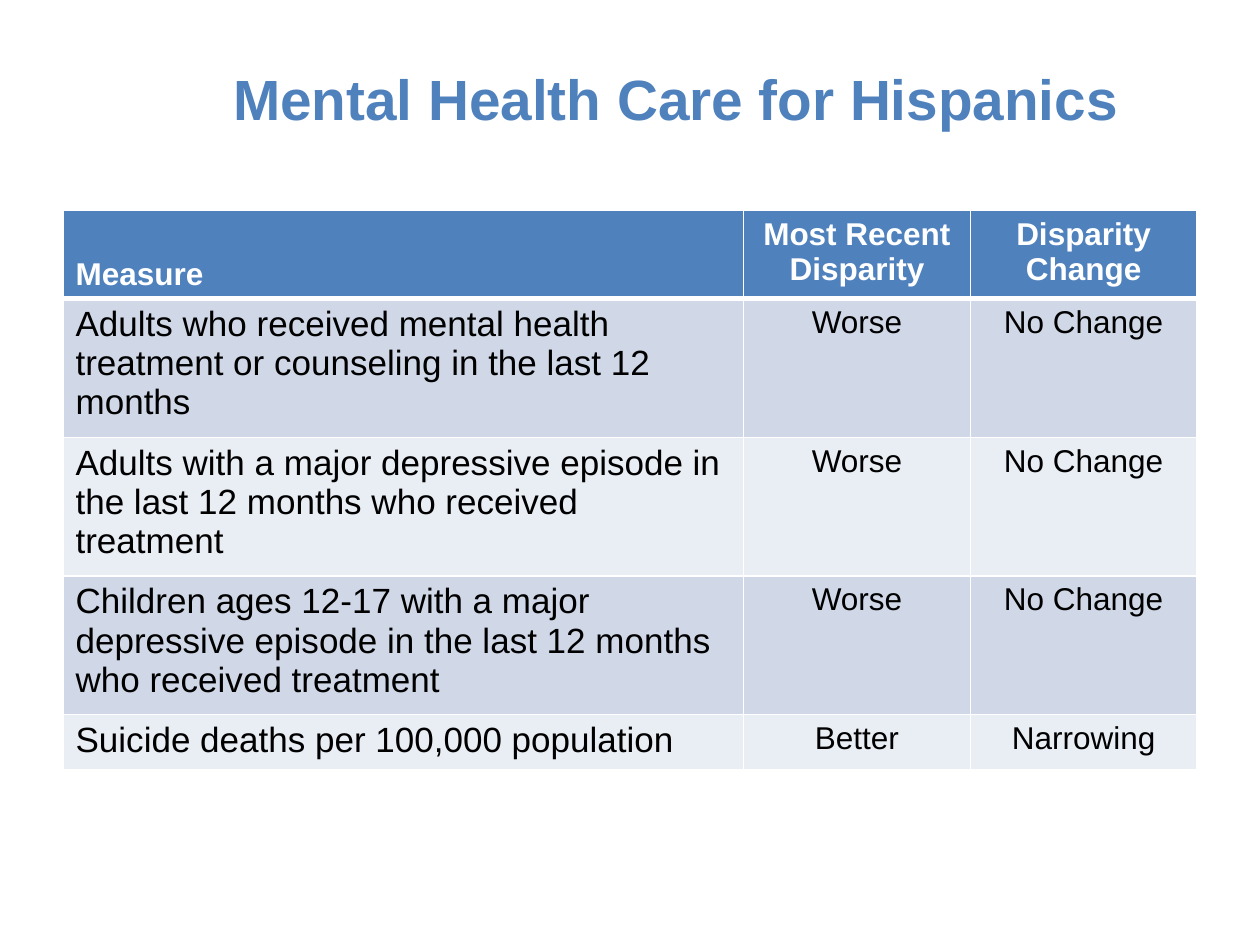
from lxml import etree
from pptx import Presentation, util as u
from pptx.dml.color import RGBColor
from pptx.enum import text
from pptx.oxml.ns import qn

TITLE = "Mental Health Care for Hispanics"
HEADER = ("Measure", "Most Recent Disparity", "Disparity Change")
MEASURES = [
    ("Adults who received mental health treatment or counseling in the last 12 months",
     "Worse", "No Change"),
    ("Adults with a major depressive episode in the last 12 months who received treatment",
     "Worse", "No Change"),
    ("Children ages 12-17 with a major depressive episode in the last 12 months "
     "who received treatment", "Worse", "No Change"),
    ("Suicide deaths per 100,000 population", "Better", "Narrowing"),
]
COLUMN_WIDTHS = (13.72, 4.57, 4.57)
ROW_HEIGHTS = (1.66, 2.62, 2.62, 2.62, 1.02)

THEME = {
    "font": "Arial",
    "accent": "4F81BD",
    "white": "FFFFFF",
    "black": "000000",
    "bands": ("D0D8E8", "E9EDF4"),
    "title_size": 32.4,
    "measure_size": 20,
    "size": 18,
    "border": 1,
    "header_border": 3,
}


def format_paragraph(paragraph, size, color, bold=False, centered=False):
    paragraph.alignment = text.PP_ALIGN.CENTER if centered else text.PP_ALIGN.LEFT
    for run in paragraph.runs:
        run.font.name = THEME["font"]
        run.font.size = u.Pt(size)
        run.font.bold = bold
        run.font.color.rgb = RGBColor.from_string(color)


def set_borders(cell, top, bottom):
    """Draw white cell borders; top and bottom are widths in points."""
    properties = cell._tc.get_or_add_tcPr()
    widths = {"lnL": THEME["border"], "lnR": THEME["border"], "lnT": top, "lnB": bottom}
    for position, (side, width) in enumerate(widths.items()):
        line = etree.Element(qn(f"a:{side}"), w=str(u.Pt(width)))
        fill = etree.SubElement(line, qn("a:solidFill"))
        etree.SubElement(fill, qn("a:srgbClr"), val=THEME["white"])
        properties.insert(position, line)


def add_title(slide):
    box = slide.shapes.add_textbox(u.Cm(4.45), u.Cm(0.76), u.Cm(19.69), u.Cm(2.41))
    frame = box.text_frame
    frame.word_wrap = True
    frame.vertical_anchor = text.MSO_ANCHOR.MIDDLE
    frame.text = TITLE
    format_paragraph(frame.paragraphs[0], THEME["title_size"], THEME["accent"], bold=True)


def fill_cell(cell, content, row, column):
    is_header = row == 0
    is_measure = column == 0
    cell.text = content
    cell.fill.solid()
    fill = THEME["accent"] if is_header else THEME["bands"][(row - 1) % 2]
    cell.fill.fore_color.rgb = RGBColor.from_string(fill)
    if is_header and is_measure:
        cell.vertical_anchor = text.MSO_ANCHOR.BOTTOM
    format_paragraph(
        cell.text_frame.paragraphs[0],
        THEME["measure_size"] if is_measure and not is_header else THEME["size"],
        THEME["white"] if is_header else THEME["black"],
        bold=is_header,
        centered=not is_measure,
    )
    set_borders(
        cell,
        top=THEME["header_border"] if row == 1 else THEME["border"],
        bottom=THEME["header_border"] if is_header else THEME["border"],
    )


def add_measures_table(slide):
    rows = [HEADER, *MEASURES]
    table = slide.shapes.add_table(
        len(rows), len(HEADER), u.Cm(1.27), u.Cm(4.24),
        u.Cm(sum(COLUMN_WIDTHS)), u.Cm(sum(ROW_HEIGHTS))).table
    for column, width in zip(table.columns, COLUMN_WIDTHS):
        column.width = u.Cm(width)
    for row, height in zip(table.rows, ROW_HEIGHTS):
        row.height = u.Cm(height)
    for row, contents in enumerate(rows):
        for column, content in enumerate(contents):
            fill_cell(table.cell(row, column), content, row, column)


def main():
    presentation = Presentation()
    presentation.slide_width, presentation.slide_height = u.Cm(25.4), u.Cm(19.05)
    slide = presentation.slides.add_slide(presentation.slide_layouts[6])
    add_title(slide)
    add_measures_table(slide)
    presentation.save("out.pptx")


if __name__ == "__main__":
    main()
